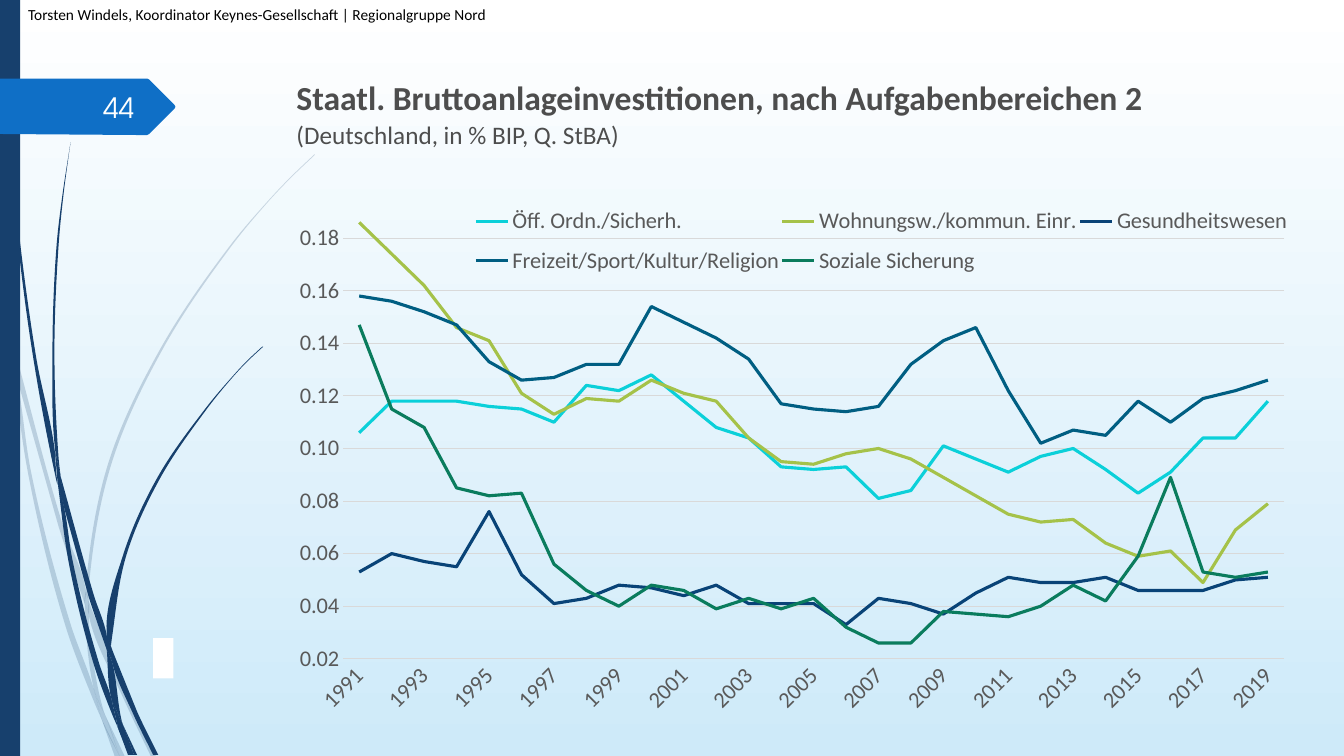
import math
from dataclasses import dataclass

import lxml.etree
import pptx
import pptx.chart.data
import pptx.dml.color
import pptx.enum.chart
import pptx.enum.shapes
import pptx.enum.text
import pptx.oxml
import pptx.oxml.ns
import pptx.util

RGB = pptx.dml.color.RGBColor
NAVY = RGB(0x17, 0x40, 0x6D)
BLUE = RGB(0x0F, 0x6F, 0xC6)
WHITE = RGB(0xFF, 0xFF, 0xFF)
NEAR_WHITE = RGB(0xFE, 0xFF, 0xFF)
BLACK = RGB(0, 0, 0)
PALE_BLUE = RGB(0xCE, 0xEA, 0xF9)
TITLE_GREY = RGB(0x4D, 0x4D, 0x4D)
LABEL_GREY = RGB(0x59, 0x59, 0x59)
GRID_GREY = RGB(0xD9, 0xD9, 0xD9)
AQUA = RGB(0x0B, 0xD0, 0xD9)
LIME = RGB(0xA5, 0xC2, 0x49)
DEEP_BLUE = RGB(0x09, 0x43, 0x77)
PETROL = RGB(0x00, 0x5E, 0x82)
GREEN = RGB(0x0A, 0x7C, 0x5D)

PX = 9144  # EMU per px, 100 px to the inch
Points = list[tuple[int, int]]
qn = pptx.oxml.ns.qn


@dataclass
class Series:
    name: str
    color: RGB
    thousandths: list[int]


# Outlines of the grass pieces in px
PALE_GRASS: list[Points] = [
    [(11, 350), (9, 322), (0, 282), (0, 299), (10, 344)],
    [(58, 522), (84, 599), (85, 586), (62, 520), (14, 345), (17, 376)],
    [(92, 607), (88, 596), (88, 610), (123, 694), (150, 751), (155, 751), (127, 692)],
    [(119, 751), (124, 751), (105, 711)],
    [(93, 683), (70, 619), (31, 469), (17, 376), (11, 350), (28, 470), (65, 621), (92, 693), (101, 714), (99, 707)],
    [(84, 599), (87, 646), (93, 683), (96, 692), (105, 711), (103, 706), (91, 646), (88, 610), (88, 608)],
    [(88, 584), (110, 462), (160, 349), (229, 245), (268, 198), (290, 175), (312, 154), (312, 153), (289, 175),
     (268, 197), (228, 244), (158, 348), (107, 461), (85, 584), (85, 586), (88, 596)],
    [(101, 714), (114, 751), (119, 751)],
    [(88, 608), (88, 610), (88, 596), (85, 586), (84, 599)],
    [(96, 692), (93, 683), (99, 707), (101, 714), (119, 751), (105, 711)],
]
DARK_GRASS: list[Points] = [
    [(7, 110), (17, 233), (33, 355), (56, 477), (57, 481), (55, 457), (55, 453), (36, 355), (19, 232), (8, 109),
     (5, 48), (4, 0), (3, 0), (4, 48)],
    [(88, 592), (106, 645), (106, 633), (106, 631), (93, 590), (60, 472), (64, 505)],
    [(113, 649), (110, 641), (111, 656), (132, 708), (152, 749), (157, 749), (136, 706)],
    [(110, 691), (98, 657), (72, 556), (64, 505), (57, 477), (68, 557), (93, 659), (111, 708), (117, 722), (116, 717)],
    [(60, 472), (58, 453), (54, 349), (58, 245), (63, 193), (70, 141), (62, 193), (56, 245), (52, 349), (55, 449)],
    [(133, 749), (136, 749), (122, 719)],
    [(57, 477), (64, 505), (60, 472), (55, 449), (55, 453)],
    [(111, 633), (125, 552), (158, 476), (205, 406), (231, 374), (245, 359), (261, 344), (260, 344), (245, 358),
     (231, 373), (204, 405), (156, 474), (122, 551), (106, 631), (110, 641)],
    [(117, 722), (127, 749), (131, 749)],
    [(106, 645), (110, 691), (116, 706), (122, 719), (121, 716), (111, 656), (109, 651)],
    [(106, 645), (109, 651), (111, 656), (110, 641), (106, 631), (106, 633)],
    [(116, 706), (110, 691), (116, 717), (117, 722), (130, 749), (133, 749), (122, 719)],
]
ARROW: Points = [(174, 106), (173, 108), (148, 133), (146, 134), (136, 134), (0, 133), (0, 78), (136, 78),
                 (146, 78), (148, 79), (173, 104)]

YEARS = [str(year) for year in range(1991, 2020)]
SERIES = [
    Series("Öff. Ordn./Sicherh.", AQUA,
           [106, 118, 118, 118, 116, 115, 110, 124, 122, 128, 118, 108, 104, 93, 92, 93, 81, 84, 101, 96,
            91, 97, 100, 92, 83, 91, 104, 104, 118]),
    Series("Wohnungsw./kommun. Einr.", LIME,
           [186, 174, 162, 146, 141, 121, 113, 119, 118, 126, 121, 118, 104, 95, 94, 98, 100, 96, 89, 82,
            75, 72, 73, 64, 59, 61, 49, 69, 79]),
    Series("Gesundheitswesen", DEEP_BLUE,
           [53, 60, 57, 55, 76, 52, 41, 43, 48, 47, 44, 48, 41, 41, 41, 33, 43, 41, 37, 45,
            51, 49, 49, 51, 46, 46, 46, 50, 51]),
    Series("Freizeit/Sport/Kultur/Religion", PETROL,
           [158, 156, 152, 147, 133, 126, 127, 132, 132, 154, 148, 142, 134, 117, 115, 114, 116, 132, 141, 146,
            122, 102, 107, 105, 118, 110, 119, 122, 126]),
    Series("Soziale Sicherung", GREEN,
           [147, 115, 108, 85, 82, 83, 56, 46, 40, 48, 46, 39, 43, 39, 43, 32, 26, 26, 38, 37,
            36, 40, 48, 42, 59, 89, 53, 51, 53]),
]


def emu(*lengths: int) -> list[int]:
    return [length * PX for length in lengths]


def paint(sp, color: RGB, alpha: int = 100) -> None:
    sp.shadow.inherit = False
    sp.fill.solid()
    sp.fill.fore_color.rgb = color
    sp.line.fill.background()
    if alpha < 100:
        clr = sp._element.spPr.find(f"{qn('a:solidFill')}/{qn('a:srgbClr')}")
        lxml.etree.SubElement(clr, qn("a:alpha")).set("val", str(alpha * 1000))


def add_outline(s, points: Points, color: RGB, alpha: int = 100):
    corners = [tuple(emu(*point)) for point in points]
    builder = s.shapes.build_freeform(*corners[0], scale=1.0)
    builder.add_line_segments(corners[1:], close=True)
    sp = builder.convert_to_shape()
    paint(sp, color, alpha)
    return sp


def bend(sp) -> None:
    """Turn the straight sides into curves that stay smooth except at sharp corners."""
    sides = list(sp._element.iter(qn("a:lnTo")))
    pts = [complex(int(pt.get("x")), int(pt.get("y")))
           for pt in sp._element.iter(qn("a:pt"))]
    n = len(pts)

    def direction(i: int, side: complex) -> complex:
        before, after = pts[i] - pts[i - 1], pts[(i + 1) % n] - pts[i]
        before, after = before / abs(before), after / abs(after)
        is_corner = (before * after.conjugate()).real < 0.8
        tangent = side if is_corner else before + after
        return tangent / abs(tangent)

    for i, side in enumerate(sides):
        start, end = pts[i], pts[i + 1]
        reach = math.dist((start.real, start.imag), (end.real, end.imag)) / 3
        controls = (start + reach * direction(i, end - start), end - reach * direction(i + 1, end - start), end)
        curve = side.makeelement(qn("a:cubicBezTo"))
        for c in controls:
            lxml.etree.SubElement(curve, qn("a:pt"), x=str(round(c.real)), y=str(round(c.imag)))
        side.getparent().replace(side, curve)


def format_font(font, size: int, color: RGB, name: str = "Calibri", bold: bool = False) -> None:
    font.size, font.name, font.bold = pptx.util.Pt(size), name, bold
    font.color.rgb = color


def add_run(p, text: str, *style, **options) -> None:
    r = p.add_run()
    r.text = text
    format_font(r.font, *style, **options)


def add_text(s, box: tuple[int, int, int, int], text: str, *style):
    tf = s.shapes.add_textbox(*emu(*box)).text_frame
    tf.word_wrap = True
    add_run(tf.paragraphs[0], text, *style)
    return tf


def set_layout(parent, index: int, box: tuple[float, float, float, float], target: str = "") -> None:
    for old in parent.findall(qn("c:layout")):
        parent.remove(old)
    sizes = "".join(f'<c:{k} val="{v}"/>' for k, v in zip("xywh", box))
    parent.insert(index, pptx.oxml.parse_xml(
        f'<c:layout {pptx.oxml.ns.nsdecls("c")}><c:manualLayout>{target}'
        f'<c:xMode val="edge"/><c:yMode val="edge"/>{sizes}</c:manualLayout></c:layout>'))


def add_line_chart(s) -> None:
    data = pptx.chart.data.CategoryChartData(number_format="0.000")
    data.categories = YEARS
    for series in SERIES:
        data.add_series(series.name, [v / 1000 for v in series.thousandths])
    chart = s.shapes.add_chart(pptx.enum.chart.XL_CHART_TYPE.LINE, *emu(270, 190, 1018, 533), data).chart
    chart.has_title = False
    format_font(chart.font, 16, BLACK)
    chart.plots[0].vary_by_categories = False
    for line, series in zip(chart.plots[0].series, SERIES):
        line.smooth = False
        line.format.line.color.rgb = series.color
        line.format.line.width = pptx.util.Pt(2.25)
        line.marker.style = pptx.enum.chart.XL_MARKER_STYLE.NONE
    set_layout(chart._chartSpace.chart.plotArea, 0, (0.069, 0.038, 0.917, 0.832), '<c:layoutTarget val="inner"/>')

    # Axes
    years, values = chart.category_axis, chart.value_axis
    for axis in (years, values):
        axis.major_tick_mark = axis.minor_tick_mark = pptx.enum.chart.XL_TICK_MARK.NONE
        format_font(axis.tick_labels.font, 16, LABEL_GREY)
    values.minimum_scale, values.maximum_scale, values.major_unit = 0.02, 0.19, 0.02
    values.tick_labels.number_format = "0.00"
    values.tick_labels.number_format_is_linked = False
    values.format.line.fill.background()
    for line in (years.format.line, values.major_gridlines.format.line):
        line.color.rgb = GRID_GREY
        line.width = pptx.util.Pt(0.75)
    years._element.find(f"{qn('c:txPr')}/{qn('a:bodyPr')}").set("rot", "-2700000")
    skip = years._element.makeelement(qn("c:tickLblSkip"), {"val": "2"})
    years._element.find(qn("c:noMultiLvlLbl")).addprevious(skip)

    # Legend
    chart.has_legend = True
    legend = chart.legend
    legend.position = pptx.enum.chart.XL_LEGEND_POSITION.BOTTOM
    legend.include_in_layout = True
    format_font(legend.font, 16, LABEL_GREY)
    set_layout(legend._element, 1, (0.195, 0.007, 0.797, 0.17))


def main() -> None:
    prs = pptx.Presentation()
    prs.slide_width, prs.slide_height = emu(1333, 750)
    s = prs.slides.add_slide(prs.slide_layouts[5])

    # Background
    fill = s.background.fill
    fill.gradient()
    fill.gradient_angle = 270
    for stop, color, position in zip(fill.gradient_stops, (WHITE, PALE_BLUE), (0, 1)):
        stop.color.rgb, stop.position = color, position

    # Decoration on the left
    for pieces, alpha in ((PALE_GRASS, 20), (DARK_GRASS, 100)):
        for piece in pieces:
            bend(add_outline(s, piece, NAVY, alpha))
    rectangle = pptx.enum.shapes.MSO_SHAPE.RECTANGLE
    paint(s.shapes.add_shape(rectangle, *emu(0, 0, 20, 750)), NAVY)
    add_outline(s, ARROW, BLUE)
    paint(s.shapes.add_shape(rectangle, *emu(152, 633, 20, 40)), WHITE)

    # Title
    title = s.shapes.title
    title.left, title.top, title.width, title.height = emu(284, 68, 992, 73)
    tf = title.text_frame
    tf.word_wrap = True
    tf.auto_size = pptx.enum.text.MSO_AUTO_SIZE.NONE
    tf.vertical_anchor = pptx.enum.text.MSO_ANCHOR.TOP
    p = tf.paragraphs[0]
    p.alignment = pptx.enum.text.PP_ALIGN.LEFT
    p.line_spacing, p.space_after = 1.07, pptx.util.Pt(8)
    add_run(p, "Staatl. Bruttoanlageinvestitionen, nach Aufgabenbereichen 2", 24, TITLE_GREY, bold=True)
    p.add_line_break()
    add_run(p, "(Deutschland, in % BIP, Q. StBA)", 18, TITLE_GREY)

    # Slide number, chart and header
    tf = add_text(s, (58, 86, 85, 40), "44", 20, NEAR_WHITE, "TeX Gyre Adventor")
    tf.vertical_anchor = pptx.enum.text.MSO_ANCHOR.MIDDLE
    tf.paragraphs[0].alignment = pptx.enum.text.PP_ALIGN.RIGHT
    add_line_chart(s)
    add_text(s, (18, 0, 833, 40), "Torsten Windels, Koordinator Keynes-Gesellschaft | Regionalgruppe Nord", 11, BLACK)

    prs.save("out.pptx")


if __name__ == "__main__":
    main()
